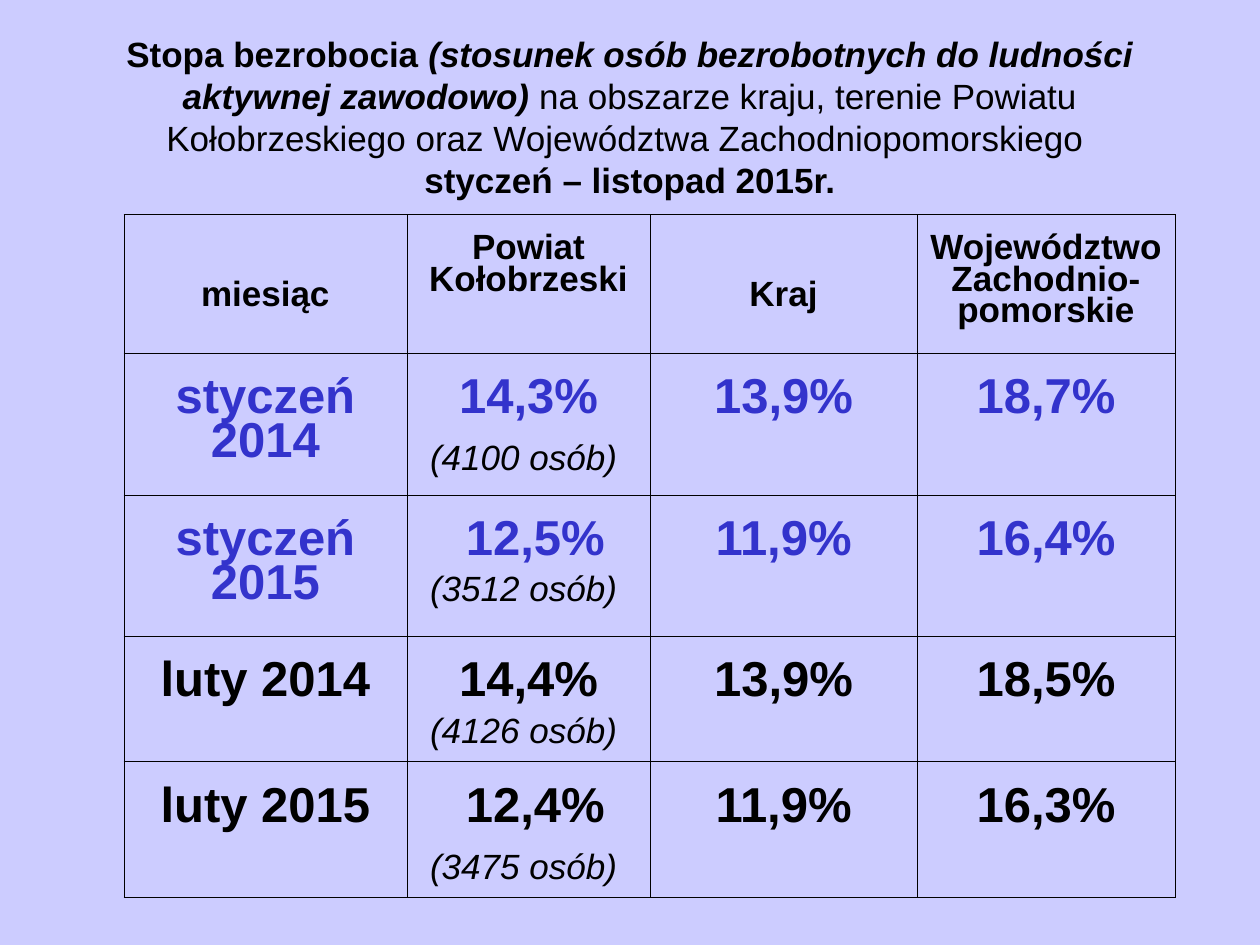
from lxml import etree
from pptx import Presentation
from pptx.dml.color import RGBColor
from pptx.enum.text import MSO_ANCHOR, PP_ALIGN
from pptx.oxml.ns import qn
from pptx.util import Pt

CENTER = PP_ALIGN.CENTER
MIDDLE = MSO_ANCHOR.MIDDLE
FONT = "Arial"
COLORS = {"background": "CCCCFF", "black": "000000", "blue": "3333CC"}

# text, bold, italic
TITLE = [
    ("Stopa bezrobocia ", True, False),
    ("(stosunek osób bezrobotnych do ludności aktywnej zawodowo)", True, True),
    (" na obszarze kraju, terenie Powiatu Kołobrzeskiego oraz "
     "Województwa Zachodniopomorskiego \v", False, False),
    ("styczeń – listopad 2015r.", True, False),
]
# text, top margin
HEADERS = [
    ("miesiąc", 38.5),
    ("Powiat Kołobrzeski", 11.5),
    ("Kraj", 38.5),
    ("Województwo Zachodnio-pomorskie", 11.5),
]
# month, county rate, persons, space before persons, country, voivodeship, colour
RATES = [
    ("styczeń 2014", "14,3%", "(4100 osób) ", 13, "13,9%", "18,7%", "blue"),
    ("styczeń 2015", " 12,5%", "(3512 osób) ", 7, "11,9%", "16,4%", "blue"),
    ("luty 2014", "14,4%", "(4126 osób) ", 7, "13,9%", "18,5%", "black"),
    ("luty 2015", " 12,4%", "(3475 osób) ", 13, "11,9%", "16,3%", "black"),
]
TABLE_LEFT, TABLE_TOP = 70.75, 122.4
COLUMN_WIDTHS = [161.75, 139, 152.5, 147.5]
ROW_HEIGHTS = [79.4, 81, 80.7, 70.8, 76]
OUTER_LINE, INNER_LINE = 0.23, 0.11
RATE_MARGIN = 14.4


def rgb(name):
    return RGBColor.from_string(COLORS[name])


def style_font(font, size, color="black", bold=None, italic=None):
    font.name = FONT
    font.size = Pt(size)
    font.color.rgb = rgb(color)
    font.bold = bold
    font.italic = italic


def write_cell_line(para, text, size, space, color="black", bold=True, italic=False):
    para.text = text
    para.alignment = CENTER
    para.line_spacing = 0.81
    para.space_before = Pt(space)
    style_font(para.font, size, color, bold, italic)
    for span in para.runs:
        style_font(span.font, size, color, bold, italic)


def set_borders(cell, widths):
    properties = cell._tc.get_or_add_tcPr()
    for index, (side, width) in enumerate(widths.items()):
        line = etree.Element(qn(f"a:ln{side}"), w=str(Pt(width)))
        fill = etree.SubElement(line, qn("a:solidFill"))
        etree.SubElement(fill, qn("a:srgbClr"), val=COLORS["black"])
        properties.insert(index, line)


def add_title(slide):
    box = slide.shapes.add_textbox(Pt(36), Pt(21.6), Pt(648), Pt(90))
    frame = box.text_frame
    frame.word_wrap = True
    frame.vertical_anchor = MIDDLE
    para = frame.paragraphs[0]
    para.text = "".join(text for text, _, _ in TITLE[:0])
    para.alignment = CENTER
    style_font(para.font, 20)
    for text, bold, italic in TITLE:
        before, *after = text.split("\v")
        span = para.add_run()
        span.text = before
        style_font(span.font, 20, "black", bold, italic)
        if after:
            para.add_line_break()


def add_rate_table(slide):
    frame = slide.shapes.add_table(
        len(ROW_HEIGHTS), len(COLUMN_WIDTHS), Pt(TABLE_LEFT), Pt(TABLE_TOP),
        Pt(sum(COLUMN_WIDTHS)), Pt(sum(ROW_HEIGHTS)))
    table = frame.table
    table.first_row = table.horz_banding = False
    for column, width in zip(table.columns, COLUMN_WIDTHS):
        column.width = Pt(width)
    for row, height in zip(table.rows, ROW_HEIGHTS):
        row.height = Pt(height)

    last_row, last_column = len(ROW_HEIGHTS) - 1, len(COLUMN_WIDTHS) - 1
    for r, row in enumerate(table.rows):
        for c, cell in enumerate(row.cells):
            cell.fill.background()
            cell.margin_top = Pt(RATE_MARGIN)
            edges = {"L": c == 0, "R": c == last_column,
                     "T": r == 0, "B": r == last_row}
            set_borders(cell, {side: OUTER_LINE if outer else INNER_LINE
                               for side, outer in edges.items()})

    for c, (text, margin) in enumerate(HEADERS):
        cell = table.cell(0, c)
        cell.margin_top = Pt(margin)
        write_cell_line(cell.text_frame.paragraphs[0], text, 20, 5)

    for r, (month, county, persons, gap, country, region, color) in enumerate(RATES, 1):
        for c, text in enumerate((month, county, country, region)):
            write_cell_line(table.cell(r, c).text_frame.paragraphs[0], text, 28, 7, color)
        write_cell_line(table.cell(r, 1).text_frame.add_paragraph(), persons, 20, gap,
                        bold=False, italic=True)


def main():
    deck = Presentation()
    deck.slide_width, deck.slide_height = Pt(720), Pt(540)
    slide = deck.slides.add_slide(deck.slide_layouts[6])
    slide.background.fill.solid()
    slide.background.fill.fore_color.rgb = rgb("background")
    add_title(slide)
    add_rate_table(slide)
    deck.save("out.pptx")


if __name__ == "__main__":
    main()
